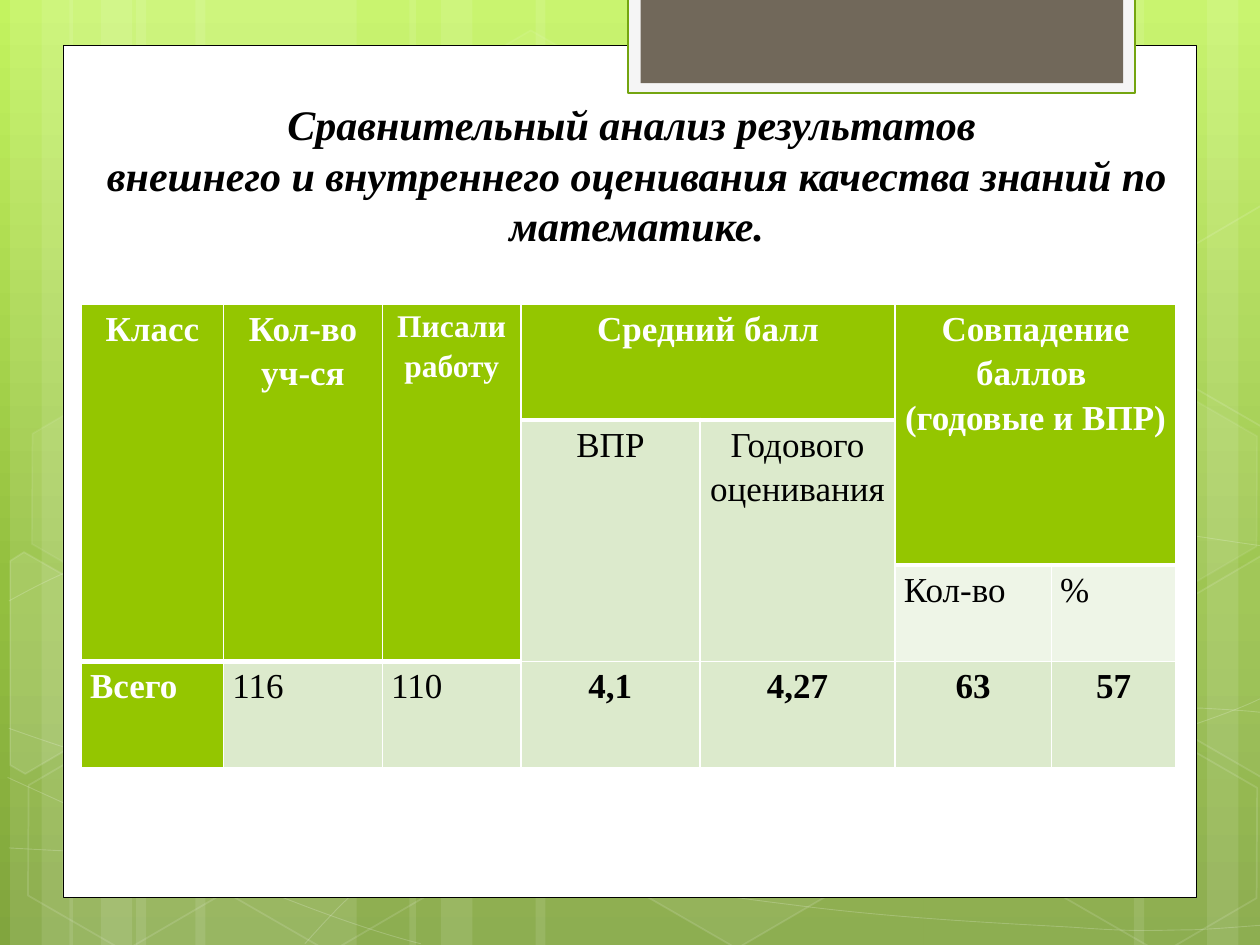
from copy import deepcopy
from math import cos, radians, sin

from lxml.etree import SubElement
from pptx import Presentation
from pptx.dml.color import RGBColor
from pptx.enum.shapes import MSO_SHAPE
from pptx.enum.text import MSO_AUTO_SIZE, PP_ALIGN
from pptx.oxml.ns import qn
from pptx.util import Inches, Pt

WHITE = RGBColor(0xFF, 0xFF, 0xFF)
BLACK = RGBColor(0x00, 0x00, 0x00)
LIME = RGBColor(0xC3, 0xF3, 0x5F)
LEAF = RGBColor(0x93, 0xBF, 0x3F)
MOSS = RGBColor(0x81, 0xA5, 0x3E)
TAB_PAPER = RGBColor(0xF5, 0xF5, 0xF5)
TAB_EDGE = RGBColor(0x74, 0xA5, 0x10)
TAB_BROWN = RGBColor(0x71, 0x68, 0x5A)
HEADER_GREEN = RGBColor(0x94, 0xC6, 0x00)
BAND_GREEN = RGBColor(0xDC, 0xEA, 0xCC)
PALE_GREEN = RGBColor(0xEE, 0xF5, 0xE7)

# The slide is a grid of 100 columns and 75 rows
W, H = Inches(10), Inches(7.5)
COL, ROW = W / 100, H / 75


def write(frame, text, size=20, color=BLACK, bold=False, italic=False,
          align=PP_ALIGN.CENTER, spacing=None):
    """Fill a text frame, one paragraph for each line of text."""
    frame.word_wrap = True
    for i, line in enumerate(text.split("\n")):
        paragraph = frame.add_paragraph() if i else frame.paragraphs[0]
        paragraph.alignment = align
        paragraph.line_spacing = spacing
        run = paragraph.add_run()
        run.text = line
        run.font.name = "Times New Roman"
        run.font.size = Pt(size)
        run.font.bold, run.font.italic = bold, italic
        run.font.color.rgb = color


def paint(shape, fill=None, line=None, width=1, fill_alpha=100, line_alpha=100):
    """Set fill and outline; alphas are percentages of opacity."""
    shape.shadow.inherit = False
    for part, color, alpha in ((shape.fill, fill, fill_alpha),
                               (shape.line.fill, line, line_alpha)):
        if color is None or alpha == 0:
            part.background()
            continue
        part.solid()
        part.fore_color.rgb = color
        if alpha < 100:
            owner = shape.element.spPr
            if part is not shape.fill:
                owner = owner.find(qn("a:ln"))
            tint = owner.find(qn("a:solidFill")).find(qn("a:srgbClr"))
            SubElement(tint, qn("a:alpha"), val=str(alpha * 1000))
    if line is not None:
        shape.line.width = Pt(width)


deck = Presentation()
deck.slide_width, deck.slide_height = W, H
slide = deck.slides.add_slide(deck.slide_layouts[6])
shapes = slide.shapes

# Background gradient, light at the top
backdrop = slide.background.fill
backdrop.gradient()
backdrop.gradient_angle = 270
stop_list = slide.element.find(".//" + qn("a:gsLst"))
stop_list.append(deepcopy(stop_list[-1]))
for stop, color, place in zip(backdrop.gradient_stops, (LIME, LEAF, MOSS), (0, 0.62, 1)):
    stop.color.rgb = color
    stop.position = place

# Vertical light stripes: left column, columns wide
STRIPES = [(10.8, 17.5), (0.8, 5), (3.3, 8.3), (15.5, 17.5), (5.5, 5), (8, 8.3),
           (73.3, 17.5), (95.8, 5), (90, 8.3), (42.5, 30.8), (32.5, 5), (35, 8.3)]
for left, wide in STRIPES:
    stripe = shapes.add_shape(MSO_SHAPE.RECTANGLE, int(left * COL), 0, int(wide * COL), H)
    paint(stripe, WHITE, fill_alpha=10)

# Thin waves: a start point, then two controls and an end for each Bezier arc
WAVES = [
    [(0.7, 67.3), (6.1, 67.6), (11.5, 67.9), (19, 67.8), (26.5, 67.7), (35.8, 67.5),
     (45.8, 66.5), (55.8, 65.5), (70, 63.6), (79.2, 61.7), (88.3, 59.8), (97.7, 56.8),
     (100.7, 55.1)],
    [(0.7, 47.7), (3.6, 46.1), (6.5, 44.6), (12.1, 43.1), (17.8, 41.6), (25.9, 39.4),
     (34.7, 38.7), (43.6, 38), (54.4, 37.9), (65.4, 38.7), (76.4, 39.5), (94.7, 42.6),
     (100.7, 43.4)],
    [(0.6, 61.7), (12.7, 67.2), (24.7, 72.7), (33.4, 74.9)],
    [(0.7, 57.8), (3.8, 58.9), (7, 60), (12.8, 61.6), (18.6, 63.1), (27.3, 65.6),
     (35.7, 67.3), (44, 69), (54.5, 70.8), (62.8, 71.8), (71.1, 72.9), (80, 73.3),
     (85.3, 73.6), (90.5, 74), (91.9, 73.8), (94.5, 73.8), (97.1, 73.7), (98.9, 73.5),
     (100.7, 73.4)],
    [(24.2, 74.9), (26, 72.9), (27.8, 70.9), (30.2, 69.1), (32.6, 67.3), (36, 65.3),
     (38.8, 63.9), (41.6, 62.5), (43.3, 61.9), (47, 60.9), (50.6, 59.9), (57.3, 58.5),
     (60.8, 57.8), (64.4, 57.1), (64.9, 57.1), (68, 56.9), (71.1, 56.6), (76, 56.3),
     (79.4, 56.2), (82.9, 56.1), (88.6, 56.2), (88.6, 56.2), (90.8, 56.2), (93, 56.2),
     (95.3, 56.2), (97.1, 56.3), (98.8, 56.4), (99.7, 56.5), (100.6, 56.6),
     (100.3, 56.5), (100.6, 56.6)],
]
for wave in WAVES:
    points = [(x * COL, y * ROW) for x, y in wave]
    builder = shapes.build_freeform(*points[0])
    builder.add_line_segments(points[1:], close=False)
    ribbon = builder.convert_to_shape()
    # Turn each run of three line segments into one Bezier arc
    outline = ribbon.element.find(".//" + qn("a:path"))
    segments = outline.findall(qn("a:lnTo"))
    for k in range(0, len(segments), 3):
        arc = SubElement(outline, qn("a:cubicBezTo"))
        for segment in segments[k:k + 3]:
            arc.append(segment[0])
            outline.remove(segment)
    paint(ribbon, line=WHITE, width=0.5, line_alpha=20)

# Hexagons: left column, top row, fill and line opacity
TILT = 30
HEXAGONS = [(33.4, 3.6, 4, 8), (49.7, 58.9, 6, 12), (1.1, 59.1, 0, 12), (1.4, 31.2, 7, 8),
            (17.4, 59.2, 0, 12), (75.3, 45.3, 10, 12), (83.4, 59.3, 0, 12),
            (83.4, 31.4, 7, 8)]
for left, top, fill_alpha, line_alpha in HEXAGONS:
    hexagon = shapes.add_shape(MSO_SHAPE.HEXAGON, int(left * COL), int(top * ROW),
                               int(17.5 * COL), int(15.2 * ROW))
    hexagon.adjustments[0] = 0.285
    hexagon.rotation = TILT
    paint(hexagon, WHITE, WHITE, fill_alpha=fill_alpha, line_alpha=line_alpha)

# Hexagons cut off by the slide's edges: fill opacity, centre, corners as tilted
CUT_HEXAGONS = [
    (10, (3.6, 53.5), [(0.8, 44.5), (1.9, 43.8), (9.6, 48.2), (9.5, 57), (2, 61.4),
                       (0.8, 60.7)]),
    (4, (98.5, 52), [(92.6, 48.5), (100.1, 44.1), (100.9, 44.6), (100.9, 61.3),
                     (100.2, 61.7), (92.6, 57.3)]),
    (0, (98.5, 24.1), [(92.6, 20.7), (100.1, 16.3), (101, 16.8), (100.9, 33.5),
                       (100.2, 33.9), (92.6, 29.5)]),
]
c30, s30 = cos(radians(TILT)), sin(radians(TILT))
for fill_alpha, (mid_x, mid_y), corners in CUT_HEXAGONS:
    level = [((mid_x + (x - mid_x) * c30 + (y - mid_y) * s30) * COL,
              (mid_y - (x - mid_x) * s30 + (y - mid_y) * c30) * ROW) for x, y in corners]
    builder = shapes.build_freeform(*level[0])
    builder.add_line_segments(level[1:], close=True)
    cut_hexagon = builder.convert_to_shape()
    cut_hexagon.rotation = TILT
    paint(cut_hexagon, WHITE, WHITE, fill_alpha=fill_alpha, line_alpha=12)

# White page and the tab hanging over its top edge
PANELS = [((5, 3.6, 90, 67.65), WHITE, BLACK, 0.5),
          ((49.87, -0.2, 40.2, 7.6), TAB_PAPER, TAB_EDGE, 1.25),
          ((50.85, -0.2, 38.3, 6.8), TAB_BROWN, None, 0)]
for (left, top, wide, high), fill, line, width in PANELS:
    panel = shapes.add_shape(MSO_SHAPE.RECTANGLE, int(left * COL), int(top * ROW),
                             int(wide * COL), int(high * ROW))
    paint(panel, fill, line, width)

# Title
title = shapes.add_textbox(int(6.43 * COL), int(7.34 * ROW), int(88.2 * COL), int(13.1 * ROW))
write(title.text_frame,
      "Сравнительный анализ результатов \n"
      "внешнего и внутреннего оценивания качества знаний по математике.",
      size=24, bold=True, italic=True)
title.text_frame.auto_size = MSO_AUTO_SIZE.SHAPE_TO_FIT_TEXT

# Score table
COLUMN_WIDTHS = [11.3, 12.6, 11, 14.2, 15.5, 12.4, 9.9]
ROW_HEIGHTS = [9.2, 5, 5.1, 8.4]
scores = shapes.add_table(len(ROW_HEIGHTS), len(COLUMN_WIDTHS), int(6.45 * COL), int(24.14 * ROW),
                          int(sum(COLUMN_WIDTHS) * COL), int(sum(ROW_HEIGHTS) * ROW)).table
for column, wide in zip(scores.columns, COLUMN_WIDTHS):
    column.width = int(wide * COL)
for row, high in zip(scores.rows, ROW_HEIGHTS):
    row.height = int(high * ROW)

HEADER = dict(color=WHITE, bold=True)
RESULT = dict(bold=True)
JUSTIFIED = dict(align=PP_ALIGN.JUSTIFY)
# Row, column, rows spanned, columns spanned, text, fill, format
CELLS = [
    (0, 0, 3, 1, "Класс", HEADER_GREEN, HEADER),
    (0, 1, 3, 1, "Кол-во уч-ся", HEADER_GREEN, HEADER),
    (0, 2, 3, 1, "Писали работу", HEADER_GREEN, HEADER | dict(size=18)),
    (0, 3, 1, 2, "Средний балл", HEADER_GREEN, HEADER),
    (0, 5, 2, 2, "Совпадение баллов \n(годовые и ВПР)", HEADER_GREEN, HEADER),
    (1, 3, 2, 1, "ВПР", BAND_GREEN, {}),
    (1, 4, 2, 1, "Годового оценивания", BAND_GREEN, {}),
    (2, 5, 1, 1, "Кол-во", PALE_GREEN, JUSTIFIED),
    (2, 6, 1, 1, "%", PALE_GREEN, JUSTIFIED),
    (3, 0, 1, 1, "Всего", HEADER_GREEN, HEADER | JUSTIFIED),
    (3, 1, 1, 1, "116", BAND_GREEN, JUSTIFIED),
    (3, 2, 1, 1, "110", BAND_GREEN, dict(align=PP_ALIGN.LEFT)),
]
CELLS += [(3, 3 + i, 1, 1, result, BAND_GREEN, RESULT)
          for i, result in enumerate(("4,1", "4,27", "63", "57"))]
for r, c, down, across, text, fill, style in CELLS:
    origin = scores.cell(r, c)
    if down * across > 1:
        origin.merge(scores.cell(r + down - 1, c + across - 1))
    for cell in (scores.cell(r + i, c + j) for i in range(down) for j in range(across)):
        cell.margin_left = cell.margin_right = int(0.7 * COL)
        cell.margin_top = cell.margin_bottom = 0
        if r == 0:
            properties = cell._tc.get_or_add_tcPr()
            for side, width in (("L", 1), ("R", 1), ("T", 1), ("B", 3)):
                border = SubElement(properties, qn("a:ln" + side), w=str(Pt(width)))
                SubElement(SubElement(border, qn("a:solidFill")), qn("a:srgbClr"), val=str(WHITE))
        cell.fill.solid()
        cell.fill.fore_color.rgb = fill
    write(origin.text_frame, text, spacing=1.15, **style)

deck.save("out.pptx")
